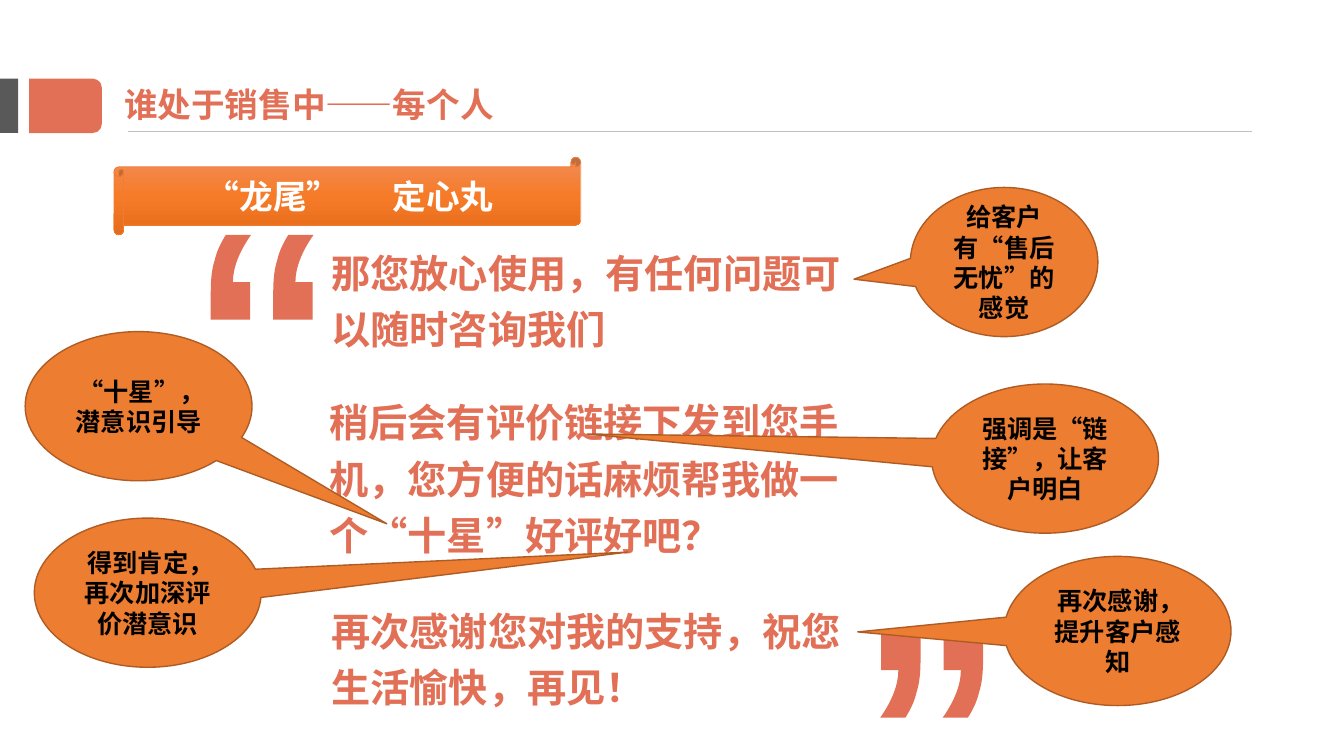
from copy import deepcopy

from lxml.etree import SubElement
from pptx import Presentation
from pptx.dml.color import RGBColor
from pptx.enum.shapes import MSO_CONNECTOR, MSO_SHAPE
from pptx.enum.text import MSO_ANCHOR, MSO_AUTO_SIZE, PP_ALIGN
from pptx.oxml.ns import qn
from pptx.util import Inches, Pt

# Content
FONT = "Noto Sans CJK SC"
CORAL, ORANGE, BROWN = "E27056", "ED7D31", "AF5C24"
GREY, PALE, WHITE, BLACK = "595959", "BFBFBF", "FFFFFF", "000000"
SLIDE_SIZE = (13.33, 7.5)

TITLE = "谁处于销售中——每个人"
BANNER_PARTS = ["“龙尾”", " ", "定心丸"]
BANNER_GRADIENT = [(0, "F18C57"), (0.5, "F67B28"), (1, "E56C19")]

# text, left, top, height
SCRIPT_LINES = [
    ("那您放心使用，有任何问题可以随时咨询我们", 3.19, 2.33, 1.23),
    ("稍后会有评价链接下发到您手机，您方便的话麻烦帮我做一个“十星”好评好吧？", 3.17, 3.81, 1.8),
    ("再次感谢您对我的支持，祝您生活愉快，再见！", 3.19, 5.88, 1.23),
]
# text, left, top, width, pointer offset from the centre, first line indent in points
CALLOUTS = [
    ("给客户有“售后无忧”的感觉", 9.03, 1.86, 1.86, (-0.801, 0.115), 0),
    ("强调是“链接”，让客户明白", 9.24, 3.81, 2.25, (-2.019, -0.165), 0),
    ("“十星”，潜意识引导", 0.25, 3.29, 2.25, (1.094, 0.788), 4),
    ("得到肯定，再次加深评价潜意识", 0.34, 5.14, 2.25, (2.115, -0.272), 4),
    ("再次感谢，提升客户感知", 9.96, 5.52, 2.25, (-1.146, 0.006), 4),
]
CALLOUT_HEIGHT = 1.48

# One quote mark inside a 1.02 x 0.84 box: each side is a point or a curve
QUOTE_SIZE = (1.02, 0.84)
QUOTE_STEP = 0.62
QUOTE_START = (0.15, 0)
QUOTE_SIDES = [
    [(0.4, 0)],
    [(0.28, 0.17), (0.22, 0.33), (0.22, 0.47)],
    [(0.39, 0.47)],
    [(0.39, 0.84)],
    [(0, 0.84)],
    [(0, 0.57)],
    [(0, 0.45), (0.01, 0.34), (0.04, 0.25)],
    [(0.06, 0.16), (0.1, 0.08), QUOTE_START],
]


def color(hex_code):
    return RGBColor.from_string(hex_code)


def format_runs(paragraph, size, hex_code):
    for run in paragraph.runs:
        run.font.size, run.font.bold, run.font.name = Pt(size), True, FONT
        run.font.color.rgb = color(hex_code)
        properties = run.font._element
        properties.set("lang", "zh-CN")
        SubElement(properties, qn("a:ea")).set("typeface", FONT)


def paint(shape, fill=None, line=None, width=1):
    shape.shadow.inherit = False
    if fill:
        shape.fill.solid()
        shape.fill.fore_color.rgb = color(fill)
    if line:
        shape.line.color.rgb = color(line)
        shape.line.width = Pt(width)
    else:
        shape.line.fill.background()


def add_preset(slide, kind, left, top, width, height):
    return slide.shapes.add_shape(kind, Inches(left), Inches(top), Inches(width), Inches(height))


def add_backdrop(slide):
    backdrop = add_preset(slide, MSO_SHAPE.RECTANGLE, 0, 0, *SLIDE_SIZE)
    paint(backdrop, WHITE)
    white = backdrop._element.spPr.find(".//" + qn("a:srgbClr"))
    SubElement(white, qn("a:alpha")).set("val", "94000")
    # Move behind the title
    slide.shapes._spTree.insert(2, backdrop._element)


def add_quote(slide, left, top, closing=False):
    """Draw two marks; the closing pair is the opening pair turned half round."""
    width, height = QUOTE_SIZE

    def place(point, shift):
        x, y = point[0] + shift, point[1]
        return (width - x, height - y) if closing else (x, y)

    def on_slide(point, shift):
        x, y = place(point, shift)
        return Inches(left + x), Inches(top + y)

    shifts = (QUOTE_STEP, 0)
    builder = slide.shapes.build_freeform(*on_slide(QUOTE_START, shifts[0]))
    for shift in shifts:
        if shift != shifts[0]:
            builder.move_to(*on_slide(QUOTE_START, shift))
        builder.add_line_segments([on_slide(side[-1], shift) for side in QUOTE_SIDES], close=True)
    quote = builder.convert_to_shape()
    paint(quote, CORAL)

    # Bend the curved sides
    segments = list(quote._element.spPr.iter(qn("a:lnTo")))
    sides = [(side, shift) for shift in shifts for side in QUOTE_SIDES]
    for segment, (side, shift) in zip(segments, sides):
        if len(side) == 3:
            curve = SubElement(segment.getparent(), qn("a:cubicBezTo"))
            for point in side:
                x, y = place(point, shift)
                corner = SubElement(curve, qn("a:pt"))
                corner.set("x", str(Inches(x)))
                corner.set("y", str(Inches(y)))
            segment.getparent().replace(segment, curve)


def add_header(slide):
    paint(add_preset(slide, MSO_SHAPE.RECTANGLE, 0, 0.78, 0.18, 0.54), GREY)
    tab = add_preset(slide, MSO_SHAPE.ROUND_2_SAME_RECTANGLE, 0.38, 0.69, 0.54, 0.72)
    tab.rotation = 90
    paint(tab, CORAL)

    title = slide.shapes.title
    title.left, title.top, title.width, title.height = map(Inches, (1.13, 0.78, 3.96, 0.5))
    frame = title.text_frame
    frame.text = TITLE
    frame.word_wrap = False
    frame.auto_size = MSO_AUTO_SIZE.NONE
    frame.vertical_anchor = MSO_ANCHOR.TOP
    frame.paragraphs[0].alignment = PP_ALIGN.LEFT
    format_runs(frame.paragraphs[0], 24, CORAL)

    rule = slide.shapes.add_connector(
        MSO_CONNECTOR.STRAIGHT, Inches(1.27), Inches(1.3), Inches(12.42), Inches(1.3))
    rule.line.color.rgb = color(PALE)
    rule.line.width = Pt(0.5)
    SubElement(rule._element.spPr, qn("a:effectLst"))


def add_banner(slide):
    banner = add_preset(slide, MSO_SHAPE.HORIZONTAL_SCROLL, 1.13, 1.56, 4.63, 0.77)
    paint(banner, line=ORANGE, width=0.5)
    banner.fill.gradient()
    banner.fill.gradient_angle = 270
    stop_list = banner._element.spPr.find(".//" + qn("a:gsLst"))
    stop_list.append(deepcopy(stop_list[0]))
    for stop, (position, hex_code) in zip(banner.fill.gradient_stops, BANNER_GRADIENT):
        stop.position = position
        stop.color.rgb = color(hex_code)

    frame = banner.text_frame
    frame.vertical_anchor = MSO_ANCHOR.MIDDLE
    paragraph = frame.paragraphs[0]
    paragraph.alignment = PP_ALIGN.CENTER
    for part in BANNER_PARTS:
        paragraph.add_run().text = part
    format_runs(paragraph, 24, WHITE)
    # Letter spacing widens the single space between the two words
    paragraph.runs[1].font._element.set("spc", "3200")


def add_script_line(slide, text, left, top, height):
    box = slide.shapes.add_textbox(Inches(left), Inches(top), Inches(5.37), Inches(height))
    frame = box.text_frame
    frame.word_wrap = True
    frame.text = text
    frame.paragraphs[0].line_spacing = 1.2
    format_runs(frame.paragraphs[0], 28, CORAL)


def add_callout(slide, text, left, top, width, pointer, indent):
    callout = add_preset(slide, MSO_SHAPE.OVAL_CALLOUT, left, top, width, CALLOUT_HEIGHT)
    callout.adjustments[0], callout.adjustments[1] = pointer
    paint(callout, ORANGE, BROWN)
    frame = callout.text_frame
    frame.word_wrap = True
    frame.vertical_anchor = MSO_ANCHOR.MIDDLE
    frame.text = text
    paragraph = frame.paragraphs[0]
    paragraph.alignment = PP_ALIGN.CENTER
    paragraph._p.get_or_add_pPr().set("indent", str(Pt(indent)))
    format_runs(paragraph, 18, BLACK)


def main():
    deck = Presentation()
    deck.slide_width, deck.slide_height = map(Inches, SLIDE_SIZE)
    slide = deck.slides.add_slide(deck.slide_layouts[5])
    add_backdrop(slide)
    add_header(slide)
    add_quote(slide, 2.09, 2.33)
    add_quote(slide, 8.73, 6.28, closing=True)
    add_banner(slide)
    for line in SCRIPT_LINES:
        add_script_line(slide, *line)
    for callout in CALLOUTS:
        add_callout(slide, *callout)
    deck.save("out.pptx")


if __name__ == "__main__":
    main()
